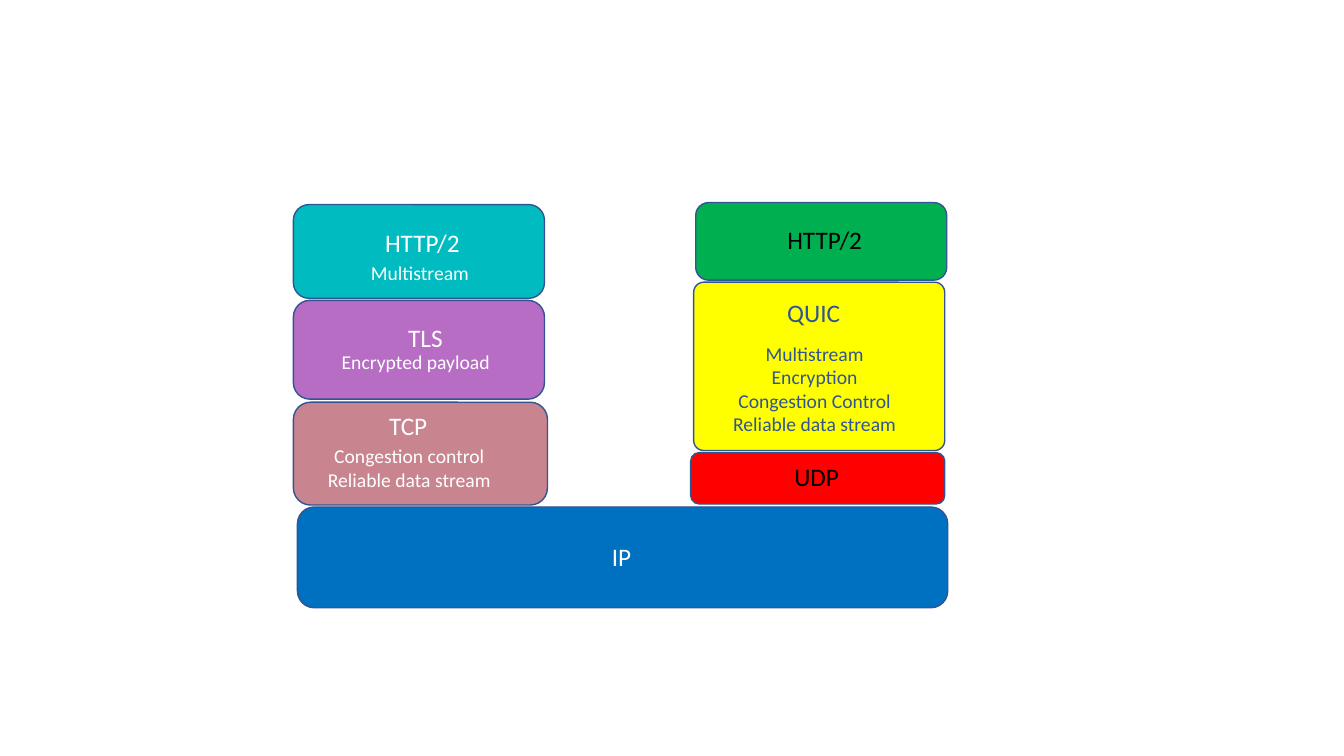
from pptx import Presentation
from pptx.dml.color import RGBColor
from pptx.enum.shapes import MSO_SHAPE
from pptx.enum.text import MSO_AUTO_SIZE, PP_ALIGN
from pptx.util import Inches, Pt

FONT = "Calibri"
OUTLINE = "325491"
WHITE, BLACK, NAVY = "FFFFFF", "000000", "2F5597"
NAME_SIZE, DETAIL_SIZE = 18, 14
LINE_HEIGHT = {NAME_SIZE: 0.3, DETAIL_SIZE: 0.235}
PADDING = 0.1

# Each layer: box, fill, text colour, corner (None for the preset's own), labels.
# Each label: offset from the layer's corner, width, size, lines.
LAYERS = [
    ((2.91, 2.98, 2.49, 0.98), "B66DC3", WHITE, None, [
        (0.38, 0.44, 1.69, DETAIL_SIZE, ["Encrypted payload"]),
        (1.04, 0.17, 0.55, NAME_SIZE, ["TLS"])]),
    ((2.91, 2.03, 2.49, 0.93), "00BCC0", WHITE, None, [
        (0.81, 0.18, 0.95, NAME_SIZE, ["HTTP/2"]),
        (0.67, 0.51, 1.19, DETAIL_SIZE, ["Multistream"])]),
    ((2.91, 3.99, 2.52, 1.02), "C8858F", WHITE, None, [
        (0.85, 0.03, 0.58, NAME_SIZE, ["TCP"]),
        (0.23, 0.37, 1.84, DETAIL_SIZE,
         ["Congestion control", "Reliable data stream"])]),
    ((2.95, 5.03, 6.45, 1.0), "0070C0", WHITE, None, [
        (3.02, 0.29, 0.39, NAME_SIZE, ["IP"])]),
    ((6.9, 2.01, 2.49, 0.77), "00B050", BLACK, None, [
        (0.81, 0.17, 0.95, NAME_SIZE, ["HTTP/2"])]),
    ((6.85, 4.49, 2.52, 0.51), "FF0000", BLACK, None, [
        (0.93, 0.04, 0.65, NAME_SIZE, ["UDP"])]),
    ((6.88, 2.8, 2.49, 1.67), "FFFF00", NAVY, 0.06, [
        (0.28, 0.54, 1.84, DETAIL_SIZE,
         ["Multistream", "Encryption", "Congestion Control",
          "Reliable data stream"]),
        (0.83, 0.1, 0.73, NAME_SIZE, ["QUIC"])]),
]


def color(value):
    return RGBColor.from_string(value)


def add_label(page, left, top, width, size, lines, text_color):
    height = LINE_HEIGHT[size] * len(lines) + PADDING
    box = page.shapes.add_textbox(*map(Inches, (left, top, width, height)))
    frame = box.text_frame
    frame.word_wrap = False
    frame.auto_size = MSO_AUTO_SIZE.SHAPE_TO_FIT_TEXT
    frame.text = "\n".join(lines)
    for para in frame.paragraphs:
        para.alignment = PP_ALIGN.CENTER if len(lines) > 1 else PP_ALIGN.LEFT
        para.font.name = FONT
        para.font.size = Pt(size)
        para.font.color.rgb = color(text_color)


def add_layer(page, box, fill, text_color, corner, labels):
    """Draw one protocol layer and place its labels inside it."""
    block = page.shapes.add_shape(MSO_SHAPE.ROUNDED_RECTANGLE,
                                  *map(Inches, box))
    block.shadow.inherit = False
    block.fill.solid()
    block.fill.fore_color.rgb = color(fill)
    block.line.color.rgb = color(OUTLINE)
    block.line.width = Pt(1)
    if corner is not None:
        block.adjustments[0] = corner
    left, top = box[:2]
    for right_by, down_by, width, size, lines in labels:
        add_label(page, left + right_by, top + down_by, width, size, lines,
                  text_color)


def main():
    deck = Presentation()
    deck.slide_width, deck.slide_height = Inches(13.33), Inches(7.5)
    page = deck.slides.add_slide(deck.slide_layouts.get_by_name("Blank"))
    for layer in LAYERS:
        add_layer(page, *layer)
    deck.save("out.pptx")


if __name__ == "__main__":
    main()
